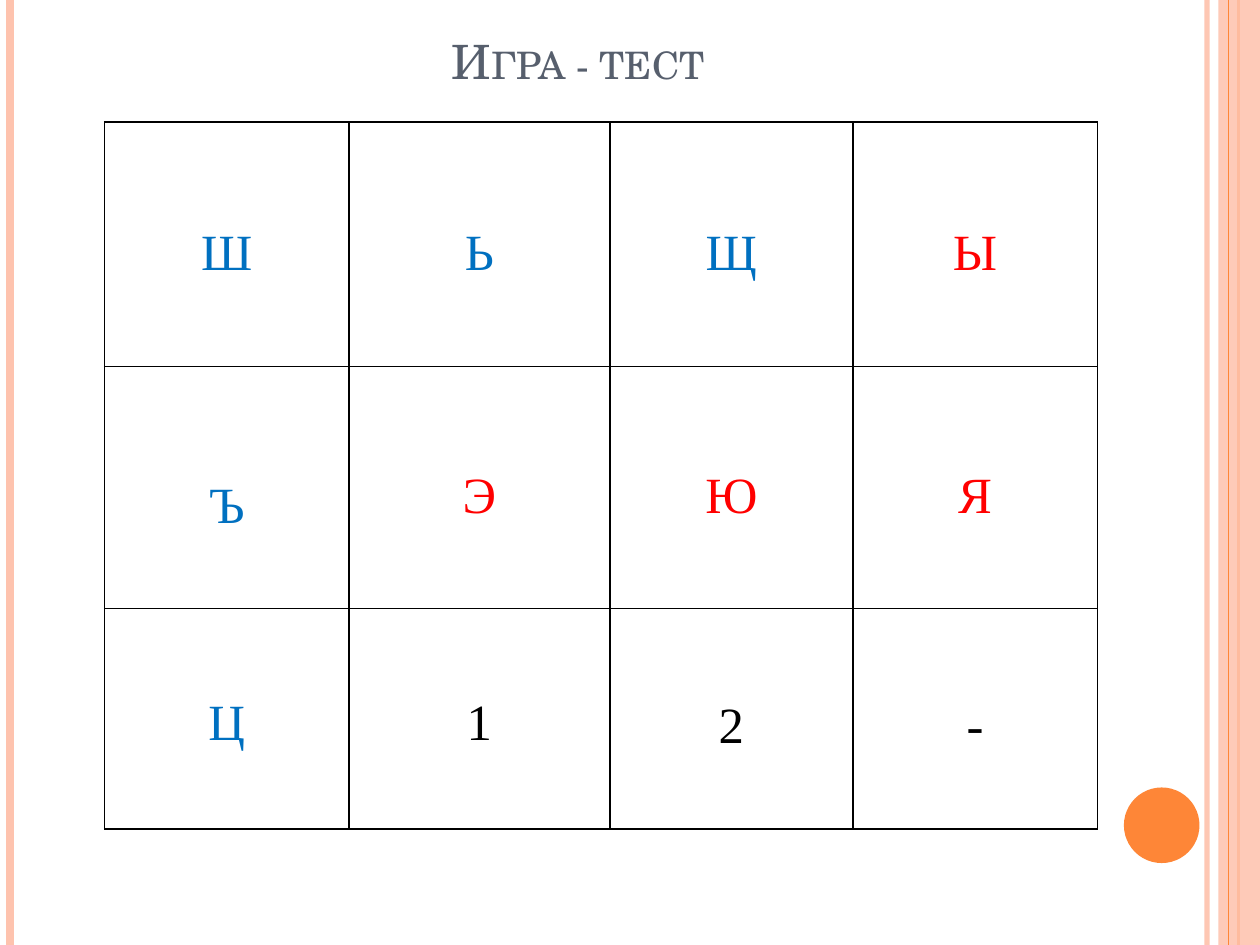
from lxml import etree
from pptx import Presentation
from pptx.dml.color import RGBColor
from pptx.enum.shapes import MSO_CONNECTOR, MSO_SHAPE
from pptx.enum.text import MSO_ANCHOR, PP_ALIGN
from pptx.oxml.ns import qn
from pptx.util import Inches, Pt

STRAIGHT = MSO_CONNECTOR.STRAIGHT
RECTANGLE, OVAL = MSO_SHAPE.RECTANGLE, MSO_SHAPE.OVAL
MIDDLE, BOTTOM = MSO_ANCHOR.MIDDLE, MSO_ANCHOR.BOTTOM
CENTER = PP_ALIGN.CENTER

THEME = {
    "peach": RGBColor.from_string("FEC3AE"),
    "orange": RGBColor.from_string("FE8637"),
    "slate": RGBColor.from_string("575F6D"),
    "blue": RGBColor.from_string("0070C0"),
    "red": RGBColor.from_string("FF0000"),
    "black": RGBColor.from_string("000000"),
    "title": {"size": Pt(27), "name": "TeX Gyre Schola", "bold": False},
    "letter": {"size": Pt(29), "name": "Times New Roman", "bold": False},
}


def set_all(target, values):
    for attribute, value in values.items():
        setattr(target, attribute, value)


def set_alpha(fill_parent, percent):
    color = fill_parent.find(qn("a:solidFill"))[0]
    etree.SubElement(color, qn("a:alpha"), val=str(percent * 1000))


deck = Presentation()
set_all(deck, {"slide_width": Inches(10), "slide_height": Inches(7.5)})
slide = deck.slides.add_slide(deck.slide_layouts[5])
shapes = slide.shapes

stripes = [
    (9.58, "peach", 3, 93),
    (0.08, "peach", 4.5, 100),
    (9.83, "orange", 1.5, 100),
    (9.75, "orange", 0.75, 100),
]
for x, color, width, opacity in stripes:
    if x == 9.75:
        side_band = shapes.add_shape(RECTANGLE, Inches(9.67), 0, Inches(0.33), Inches(7.5))
        side_band.shadow.inherit = False
        side_band.fill.solid()
        side_band.fill.fore_color.rgb = THEME["peach"]
        side_band.line.fill.background()
        set_alpha(side_band.element.spPr, 87)
    stripe = shapes.add_connector(STRAIGHT, Inches(x), 0, Inches(x), Inches(7.5))
    stripe.line.color.rgb = THEME[color]
    stripe.line.width = Pt(width)
    stripe_properties = stripe.element.spPr
    if opacity < 100:
        set_alpha(stripe_properties.find(qn("a:ln")), opacity)
    etree.SubElement(stripe_properties, qn("a:effectLst"))

page_dot = shapes.add_shape(OVAL, Inches(8.92), Inches(6.25), Inches(0.6), Inches(0.6))
page_dot.shadow.inherit = False
page_dot.fill.solid()
page_dot.fill.fore_color.rgb = THEME["orange"]
page_dot.line.fill.background()

heading = shapes.title
set_all(heading, {"left": Inches(0.51), "top": Inches(0.3),
                  "width": Inches(8.16), "height": Inches(0.46)})
heading.text_frame.text = "Игра - тест"
set_all(heading.text_frame, {"vertical_anchor": BOTTOM, "word_wrap": True})
heading_line = heading.text_frame.paragraphs[0]
heading_line.alignment = CENTER
heading_font = heading_line.runs[0].font
set_all(heading_font, THEME["title"])
heading_font.color.rgb = THEME["slate"]
heading_line.runs[0]._r.get_or_add_rPr().set("cap", "small")

letters = [
    [("Ш", "blue", 0.07), ("Ь", "blue", 0.07), ("Щ", "blue", 0.07), ("Ы", "red", 0.07)],
    [("Ъ", "blue", 0.23), ("Э", "red", 0.07), ("Ю", "red", 0.07), ("Я", "red", 0.07)],
    [("Ц", "blue", 0), ("1", "black", 0), ("2", "black", 0.06), ("-", "black", 0.06)],
]
column_widths = [1.94, 2.07, 1.93, 1.94]
row_heights = [1.94, 1.92, 1.75]
board = shapes.add_table(3, 4, Inches(0.83), Inches(0.97),
                         Inches(sum(column_widths)), Inches(sum(row_heights))).table
set_all(board, {"first_row": False, "horz_banding": False})
for column, width in zip(board.columns, column_widths):
    column.width = Inches(width)

for r, (row, height) in enumerate(zip(letters, row_heights)):
    board.rows[r].height = Inches(height)
    for c, (letter, color, drop) in enumerate(row):
        cell = board.cell(r, c)
        cell.text = letter
        set_all(cell, {"vertical_anchor": MIDDLE, "margin_left": Inches(0.02),
                       "margin_right": Inches(0.02), "margin_top": Inches(drop),
                       "margin_bottom": 0})
        letter_line = cell.text_frame.paragraphs[0]
        set_all(letter_line, {"alignment": CENTER, "line_spacing": 1.15})
        letter_font = letter_line.runs[0].font
        set_all(letter_font, THEME["letter"])
        letter_font.color.rgb = THEME[color]
        cell_properties = cell._tc.get_or_add_tcPr()
        for side in ("a:lnL", "a:lnR", "a:lnT", "a:lnB"):
            border = etree.SubElement(cell_properties, qn(side), w=str(Pt(1)))
            border_fill = etree.SubElement(border, qn("a:solidFill"))
            etree.SubElement(border_fill, qn("a:srgbClr"), val=str(THEME["black"]))
        cell.fill.background()

deck.save("out.pptx")
